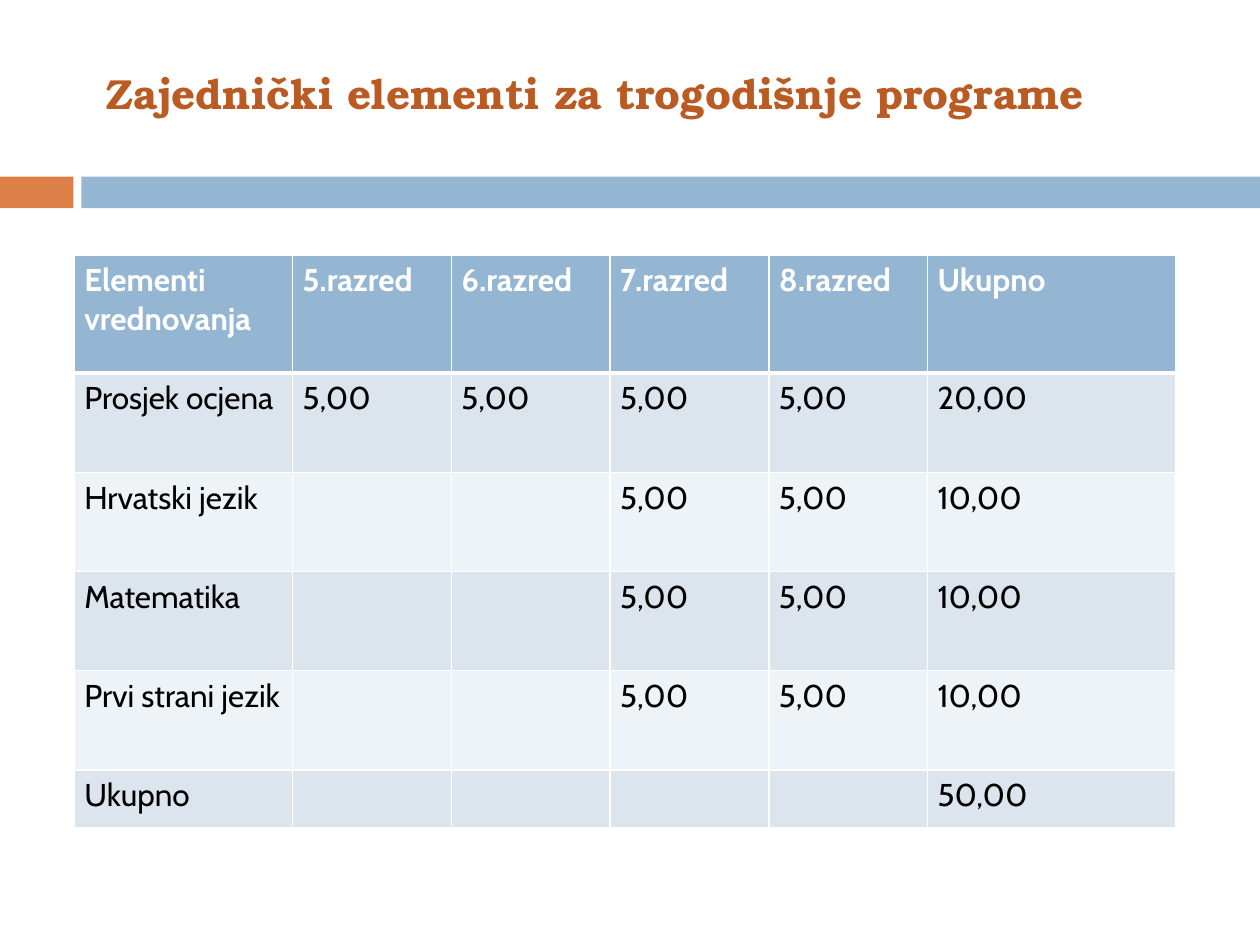
from dataclasses import dataclass

from lxml.etree import SubElement
from pptx import Presentation
from pptx.dml.color import RGBColor as Color
from pptx.enum.shapes import MSO_SHAPE as Shape
from pptx.enum.text import MSO_ANCHOR as Anchor, PP_ALIGN as Align
from pptx.oxml.ns import qn
from pptx.util import Cm, Pt


@dataclass(frozen=True)
class Theme:
    title_font: str = "TeX Gyre Bonum"
    table_font: str = "Cabin"
    title_size: int = 24
    table_size: int = 18
    title: str = "B95B22"
    accent: str = "DD8047"
    header: str = "94B6D2"
    bands: tuple = ("DCE5EE", "EEF3F7")
    white: str = "FFFFFF"
    black: str = "000000"


theme = Theme()


def format_text(paragraph, font_name, size, color, bold):
    for span in paragraph.runs:
        span.font.name = font_name
        span.font.size = Pt(size)
        span.font.color.rgb = Color.from_string(color)
        span.font.bold = bold


def add_borders(cell, widths):
    """Draw white cell borders; widths maps side letters L, R, T, B to points."""
    properties = cell._tc.get_or_add_tcPr()
    for side, width in widths.items():
        line = SubElement(properties, qn(f"a:ln{side}"), w=str(Pt(width)))
        fill = SubElement(line, qn("a:solidFill"))
        SubElement(fill, qn("a:srgbClr"), val=theme.white)


deck = Presentation()
deck.slide_width, deck.slide_height = Cm(25.4), Cm(19.05)
page = deck.slides.add_slide(deck.slide_layouts[5])

# Band under the title
for left, width, color in ((0, 1.48, theme.accent), (1.64, 23.76, theme.header)):
    bar = page.shapes.add_shape(Shape.RECTANGLE, Cm(left), Cm(3.56), Cm(width), Cm(0.64))
    bar.shadow.inherit = False
    bar.fill.solid()
    bar.fill.fore_color.rgb = Color.from_string(color)
    bar.line.fill.background()

# Title
title = page.shapes.title
title.left, title.top, title.width, title.height = Cm(1.9), Cm(0.91), Cm(20.6), Cm(1.9)
title.text_frame.text = "Zajednički elementi za trogodišnje programe"
title.text_frame.vertical_anchor = Anchor.MIDDLE
heading = title.text_frame.paragraphs[0]
heading.alignment = Align.LEFT
format_text(heading, theme.title_font, theme.title_size, theme.title, True)

# Points table
rows = (
    ("Elementi vrednovanja", "5.razred", "6.razred", "7.razred", "8.razred", "Ukupno"),
    ("Prosjek ocjena", "5,00", "5,00", "5,00", "5,00", "20,00"),
    ("Hrvatski jezik", "", "", "5,00", "5,00", "10,00"),
    ("Matematika", "", "", "5,00", "5,00", "10,00"),
    ("Prvi strani jezik", "", "", "5,00", "5,00", "10,00"),
    ("Ukupno", "", "", "", "", "50,00"),
)
column_widths = [4.4] + [3.2] * 4 + [5]
row_heights = [2.38] + [2] * 4 + [1.17]

table = page.shapes.add_table(
    len(rows), len(column_widths), Cm(1.5), Cm(5.14),
    Cm(sum(column_widths)), Cm(sum(row_heights)),
).table
for column, width in zip(table.columns, column_widths):
    column.width = Cm(width)
for row, height in zip(table.rows, row_heights):
    row.height = Cm(height)

for row_index, row in enumerate(rows):
    is_header = row_index == 0
    fill_color = theme.header if is_header else theme.bands[(row_index - 1) % 2]
    text_color = theme.white if is_header else theme.black
    top_width = 3 if row_index == 1 else 1
    bottom_width = 3 if is_header else 1
    for column_index, text in enumerate(row):
        cell = table.cell(row_index, column_index)
        cell.margin_left = cell.margin_right = Cm(0.2)
        cell.margin_top = cell.margin_bottom = Cm(0.13)
        add_borders(cell, {"L": 1, "R": 1, "T": top_width, "B": bottom_width})
        cell.fill.solid()
        cell.fill.fore_color.rgb = Color.from_string(fill_color)
        if text:
            cell.text_frame.text = text
            format_text(cell.text_frame.paragraphs[0], theme.table_font,
                        theme.table_size, text_color, is_header)

deck.save("out.pptx")
